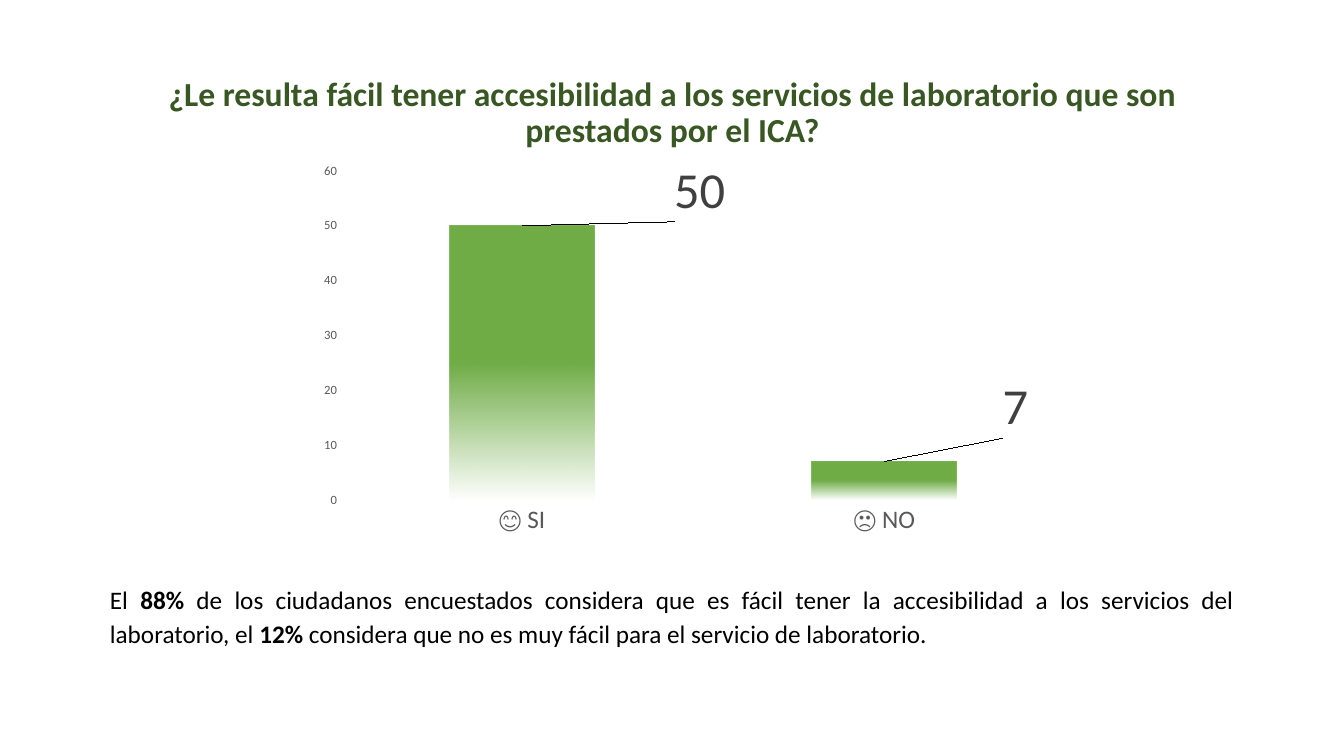
from lxml import etree
from pptx import Presentation
from pptx.chart.data import CategoryChartData
from pptx.dml.color import RGBColor
from pptx.enum import chart as ch, text as tx
from pptx.oxml import parse_xml
from pptx.oxml.ns import qn, nsdecls
from pptx.util import Inches, Pt

FONT = "Calibri"
DARK = RGBColor(0x38, 0x57, 0x23)
GREEN = RGBColor(0x70, 0xAD, 0x47)
BLACK = RGBColor(0, 0, 0)
AXIS = RGBColor(0x59, 0x59, 0x59)
LABEL = RGBColor(0x40, 0x40, 0x40)


def style(font, size, color, bold=False):
    font.name, font.size, font.bold = FONT, Pt(size), bold
    font.color.rgb = color


def write(par, words, size=18, color=BLACK, align=tx.PP_ALIGN.LEFT, space=1.0):
    """Fill a paragraph; every second piece of a list of words is bold."""
    par.alignment, par.line_spacing = align, space
    for text, bold in words:
        run = par.add_run()
        run.text = text
        style(run.font, size, color, bold)


def layout(node, index, **parts):
    """Put a manual layout into a chart node."""
    lay = parse_xml(f"<c:layout {nsdecls('c')}><c:manualLayout/></c:layout>")
    for tag, val in parts.items():
        etree.SubElement(lay[0], qn(f"c:{tag}")).set("val", str(val))
    for old in node.findall(qn("c:layout")):
        node.remove(old)
    node.insert(index, lay)


class Page:
    def __init__(self, deck):
        self.slide = deck.slides.add_slide(deck.slide_layouts[5])

    def title(self, text, box):
        shape = self.slide.shapes.title
        shape.left, shape.top, shape.width, shape.height = map(Inches, box)
        frame = shape.text_frame
        frame.word_wrap, frame.auto_size = True, tx.MSO_AUTO_SIZE.NONE
        frame.vertical_anchor = tx.MSO_ANCHOR.MIDDLE
        write(frame.paragraphs[0], [(text, True)], size=24, color=DARK,
              align=tx.PP_ALIGN.CENTER, space=0.9)

    def note(self, words, box, side):
        frame = self.slide.shapes.add_textbox(*map(Inches, box)).text_frame
        frame.word_wrap = True
        frame.margin_left = frame.margin_right = Inches(side)
        write(frame.paragraphs[0], words, align=tx.PP_ALIGN.JUSTIFY, space=1.15)

    def bars(self, cats, vals, shifts, box):
        data = CategoryChartData()
        data.categories = cats
        data.add_series("Series 1", vals)
        chart = self.slide.shapes.add_chart(
            ch.XL_CHART_TYPE.COLUMN_CLUSTERED, *map(Inches, box), data).chart
        chart.has_legend = chart.has_title = False
        style(chart.font, 10, BLACK)

        # Axes
        for axis, size in ((chart.category_axis, 18), (chart.value_axis, 9)):
            axis.has_major_gridlines = False
            axis.major_tick_mark = axis.minor_tick_mark = ch.XL_TICK_MARK.NONE
            axis.format.line.fill.background()
            style(axis.tick_labels.font, size, AXIS)
        scale = chart.value_axis
        scale.minimum_scale, scale.maximum_scale, scale.major_unit = 0, 60, 10

        # Columns fading out at the foot
        plot = chart.plots[0]
        plot.gap_width, plot.vary_by_categories = 150, False
        series = plot.series[0]
        series.invert_if_negative = False
        props = series.format.line.fill.background() or series._element.spPr
        props.insert(0, parse_xml(
            f"<a:gradFill {nsdecls('a')}><a:gsLst>"
            f"<a:gs pos='50000'><a:srgbClr val='{GREEN}'/></a:gs>"
            f"<a:gs pos='100000'><a:srgbClr val='{GREEN}'><a:alpha val='0'/></a:srgbClr></a:gs>"
            "</a:gsLst><a:lin ang='5400000' scaled='0'/></a:gradFill>"))

        # Value labels, moved off their columns
        labels = series.data_labels
        labels.show_value = True
        style(labels.font, 36, LABEL)
        for i, (x, y) in enumerate(shifts):
            label = series.points[i].data_label
            style(label.font, 36, LABEL)
            label.position = ch.XL_LABEL_POSITION.OUTSIDE_END
            node = labels._element.findall(qn("c:dLbl"))[i]
            layout(node, 1, x=x, y=y)

        area = chart._chartSpace.chart.plotArea
        layout(area, 0, layoutTarget="inner", xMode="edge", yMode="edge",
               x=0.042, y=0.038, w=0.938, h=0.85)


def main():
    deck = Presentation()
    deck.slide_width, deck.slide_height = Inches(13.33), Inches(7.5)
    page = Page(deck)
    page.title("¿Le resulta fácil tener accesibilidad a los servicios de laboratorio "
               "que son prestados por el ICA?", (0.92, 0.4, 11.5, 1.45))
    page.note([("El ", False), ("88% ", True),
               ("de los ciudadanos encuestados considera que es fácil tener la "
                "accesibilidad a los servicios del laboratorio, el ", False),
               ("12% ", True),
               ("considera que no es muy fácil para el servicio de laboratorio.", False)],
              (0.24, 5.7, 12.85, 0.8), side=0.85)
    page.bars(["😊 SI", "🙁 NO"], [50, 7], [(0.23, 0), (0.17, -0.05)],
              (3.06, 1.55, 7.66, 3.84))
    deck.save("out.pptx")


if __name__ == "__main__":
    main()
